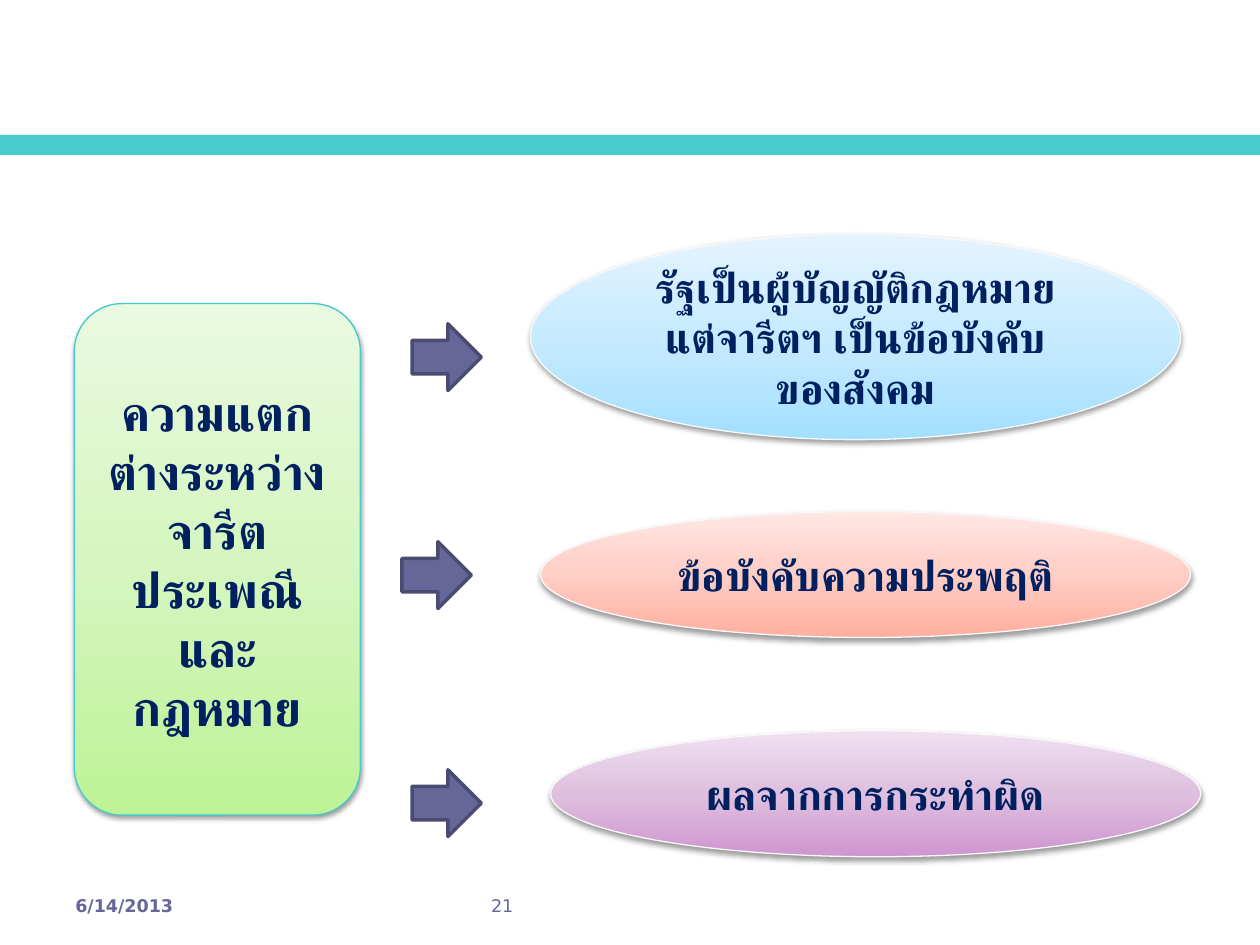
from copy import deepcopy

from pptx import Presentation
from pptx.dml.color import RGBColor
from pptx.enum.lang import MSO_LANGUAGE_ID
from pptx.enum.shapes import MSO_SHAPE
from pptx.enum.text import MSO_ANCHOR, PP_ALIGN
from pptx.oxml import parse_xml
from pptx.oxml.ns import nsdecls, qn
from pptx.util import Inches, Pt

SHADOW = (f'<a:outerShdw {nsdecls("a")} blurRad="{Pt(3.1)}" dist="{Pt(1.6)}" dir="5400000" '
          'rotWithShape="0"><a:srgbClr val="000000"><a:alpha val="38000"/></a:srgbClr></a:outerShdw>')


def add_shape(kind, box, fill, line=None, width=0.75):
    """Add a preset shape; a list of colours as fill gives a bottom-to-top gradient and a shadow."""
    sp = s.shapes.add_shape(kind, *[Inches(v) for v in box])
    sp.shadow.inherit = False
    if isinstance(fill, list):
        sp.fill.gradient()
        sp.fill.gradient_angle = 90
        spPr = sp._element.spPr
        stops = spPr.find(qn("a:gradFill")).find(qn("a:gsLst"))
        stops.insert(1, deepcopy(stops[0]))
        for stop, color, position in zip(sp.fill.gradient_stops, fill, (0, 0.5, 1)):
            stop.color.rgb = RGBColor.from_string(color)
            stop.position = position
        spPr.find(qn("a:effectLst")).append(parse_xml(SHADOW))
    else:
        sp.fill.solid()
        sp.fill.fore_color.rgb = RGBColor.from_string(fill)
    if line:
        sp.line.color.rgb = RGBColor.from_string(line)
        sp.line.width = Pt(width)
    else:
        sp.line.fill.background()
    return sp


def add_text(sp, text, size=24, color="002060", font="Roboto", bold=True,
             align=PP_ALIGN.CENTER, anchor=MSO_ANCHOR.MIDDLE, lang=MSO_LANGUAGE_ID.THAI):
    tf = sp.text_frame
    tf.word_wrap = True
    tf.vertical_anchor = anchor
    p = tf.paragraphs[0]
    p.alignment = align
    r = p.add_run()
    r.text = text
    r.font.name = font
    r.font.size = Pt(size)
    r.font.bold = bold
    r.font.color.rgb = RGBColor.from_string(color)
    r.font.language_id = lang
    # Thai is drawn with the complex-script font
    r._r.get_or_add_rPr().append(parse_xml(f'<a:cs {nsdecls("a")} typeface="{font}"/>'))


prs = Presentation()
prs.slide_width, prs.slide_height = Inches(10), Inches(7.5)
s = prs.slides.add_slide(prs.slide_layouts[6])

add_shape(MSO_SHAPE.RECTANGLE, (0, 1.07, 10, 0.16), "49CACD")

for left, text, bold in [(0.5, "6/14/2013", True), (3.8, "21", False)]:
    footer = s.shapes.add_textbox(Inches(left), Inches(7.05), Inches(2.33), Inches(0.35))
    add_text(footer, text, size=10, color="666699", font="DejaVu Sans", bold=bold,
             align=PP_ALIGN.LEFT, anchor=MSO_ANCHOR.TOP, lang=MSO_LANGUAGE_ID.ENGLISH_US)

topic = add_shape(MSO_SHAPE.ROUNDED_RECTANGLE, (0.59, 2.41, 2.27, 4.06),
                  ["BEF297", "D5F6C0", "EAFAE0"], "44C9CC")
add_text(topic, "ความแตกต่างระหว่าง จารีตประเพณีและกฎหมาย", size=28)

# arrow left and top, ellipse left, top and height, gradient, text
differences = [
    (3.27, 2.57, 4.21, 1.86, 1.63, ["A3DFFF", "C7EAFF", "E4F4FF"],
     "รัฐเป็นผู้บัญญัติกฎหมาย แต่จารีตฯ เป็นข้อบังคับของสังคม"),
    (3.19, 4.3, 4.29, 4.06, 1, ["FFAFA0", "FFCEC5", "FFE7E3"], "ข้อบังคับความประพฤติ"),
    (3.27, 6.11, 4.37, 5.8, 1, ["CF95CF", "DFBFDF", "EFE0EF"], "ผลจากการกระทำผิด"),
]
for arrow_left, arrow_top, left, top, height, gradient, text in differences:
    add_shape(MSO_SHAPE.RIGHT_ARROW, (arrow_left, arrow_top, 0.55, 0.53), "666699", "4B4B71", 2)
    ellipse = add_shape(MSO_SHAPE.OVAL, (left, top, 5.16, height), gradient, "F9F9F9")
    add_text(ellipse, text)

prs.save("out.pptx")
